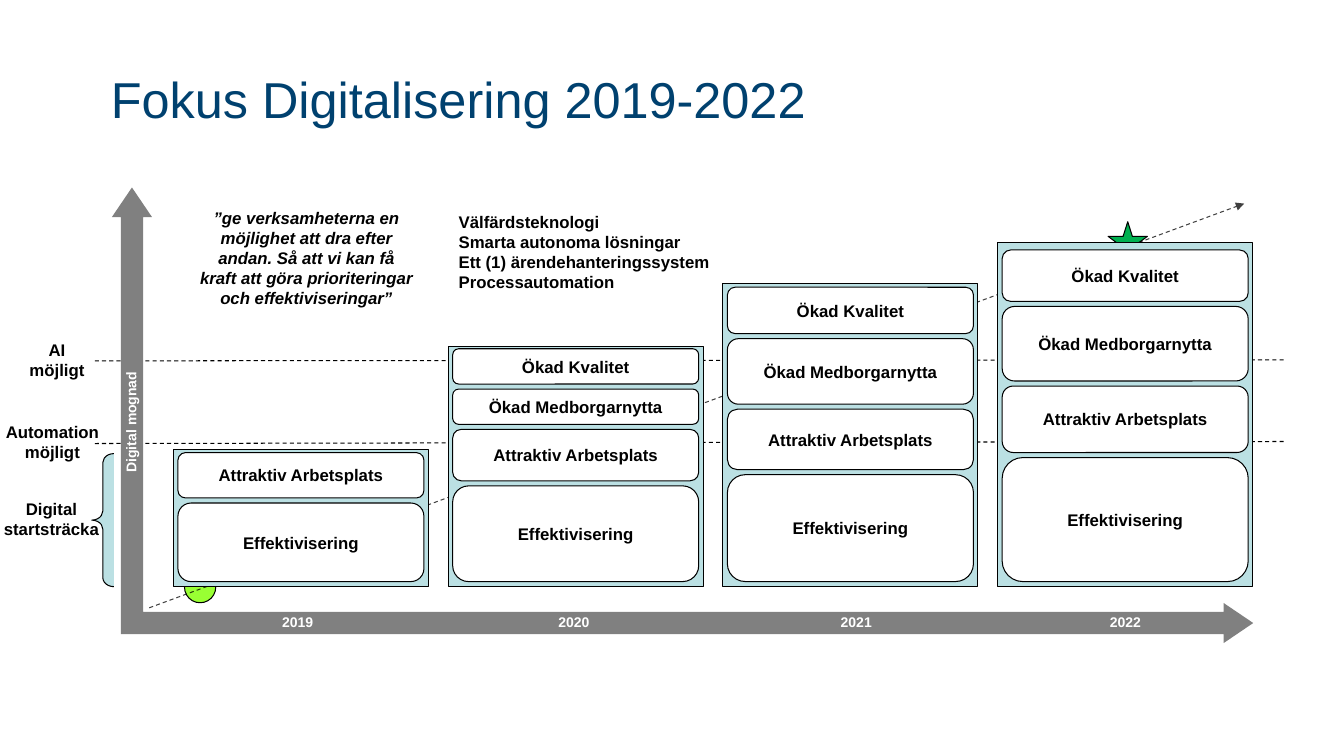
from lxml import etree
from pptx import Presentation
from pptx.dml.color import RGBColor
from pptx.enum.dml import MSO_LINE
from pptx.enum.shapes import MSO_CONNECTOR, MSO_SHAPE
from pptx.enum.text import MSO_ANCHOR, MSO_AUTO_SIZE, PP_ALIGN
from pptx.oxml.ns import qn
from pptx.util import Inches, Pt

LEFT, CENTER = PP_ALIGN.LEFT, PP_ALIGN.CENTER
TOP, MIDDLE = MSO_ANCHOR.TOP, MSO_ANCHOR.MIDDLE
RECT, ROUND = MSO_SHAPE.RECTANGLE, MSO_SHAPE.ROUNDED_RECTANGLE
BLACK, WHITE, GREY, PALE = "000000", "FFFFFF", "808080", "BBE0E3"

TITLE = "Fokus Digitalisering 2019-2022"
GOALS = ["Effektivisering", "Attraktiv Arbetsplats",
         "Ökad Medborgarnytta", "Ökad Kvalitet"]
# year, year label left, column height, goal heights from the bottom up
YEARS = [
    ("2019", 2.70, 1.36, [0.78, 0.45]),
    ("2020", 5.44, 2.38, [0.95, 0.51, 0.35, 0.35]),
    ("2021", 8.24, 3.01, [1.06, 0.60, 0.65, 0.46]),
    ("2022", 10.91, 3.41, [1.23, 0.66, 0.74, 0.51]),
]
LEVELS = [
    ("Digital startsträcka", (-0.1, 4.9, 1.22, 0.5)),
    ("Automation möjligt", (-0.05, 4.13, 1.14, 0.5)),
    ("AI möjligt", (0.14, 3.32, 0.85, 0.5)),
]
QUOTE = ("”ge verksamheterna en möjlighet att dra efter andan. Så att vi kan få "
         "kraft att göra prioriteringar och effektiviseringar”")
INITIATIVES = ["Välfärdsteknologi", "Smarta autonoma lösningar",
               "Ett (1) ärendehanteringssystem", "Processautomation"]

BASELINE, FIRST_COLUMN, COLUMN_PITCH, COLUMN_WIDTH = 5.82, 1.72, 2.725, 2.53
GOAL_WIDTH, GAP = 2.44, 0.05


def rgb(color):
    return RGBColor.from_string(color)


def write(tf, lines, size=12, color=BLACK, bold=True, italic=False,
          align=CENTER, anchor=TOP):
    tf.word_wrap = True
    tf.vertical_anchor = anchor
    for i, line in enumerate(lines):
        p = tf.paragraphs[0] if i == 0 else tf.add_paragraph()
        p.alignment = align
        r = p.add_run()
        r.text = line
        font = r.font
        font.name, font.size = "Arial", Pt(size)
        font.bold, font.italic = bold, italic
        font.color.rgb = rgb(color)


def add_text(s, box, lines, **fmt):
    tb = s.shapes.add_textbox(*map(Inches, box))
    write(tb.text_frame, lines, **fmt)
    return tb


def add_shape(s, kind, box, fill, outline=True, adjust=()):
    sp = s.shapes.add_shape(kind, *map(Inches, box))
    sp.shadow.inherit = False
    sp.fill.solid()
    sp.fill.fore_color.rgb = rgb(fill)
    if outline:
        sp.line.color.rgb = rgb(BLACK)
        sp.line.width = Pt(0.75)
    else:
        sp.line.fill.background()
    for i, value in enumerate(adjust):
        sp.adjustments[i] = value
    return sp


def add_dashed(s, x1, y1, x2, y2):
    line = s.shapes.add_connector(MSO_CONNECTOR.STRAIGHT,
                                  *map(Inches, (x1, y1, x2, y2)))
    line.line.color.rgb = rgb(BLACK)
    line.line.width = Pt(0.75)
    line.line.dash_style = MSO_LINE.DASH
    etree.SubElement(line.element.spPr, qn("a:effectLst"))
    return line


def add_trend(s):
    """Dashed arrow, slightly see-through, from start to goal."""
    ln = add_dashed(s, 1.48, 6.03, 12.34, 2.02).line
    color = next(ln.color._xFill.iter(qn("a:srgbClr")))
    etree.SubElement(color, qn("a:alpha"), val="75000")
    etree.SubElement(ln._get_or_add_ln(), qn("a:tailEnd"), type="triangle")


def add_column(s, left, height, goal_heights):
    add_shape(s, RECT, (left, BASELINE - height, COLUMN_WIDTH, height), PALE)
    goal_left = left + (COLUMN_WIDTH - GOAL_WIDTH) / 2
    top = BASELINE
    for goal, goal_height in zip(GOALS, goal_heights):
        top -= goal_height + GAP
        sp = add_shape(s, ROUND, (goal_left, top, GOAL_WIDTH, goal_height), WHITE)
        write(sp.text_frame, [goal], anchor=MIDDLE)


def main():
    prs = Presentation()
    prs.slide_width, prs.slide_height = Inches(13.33), Inches(7.5)
    s = prs.slides.add_slide(prs.slide_layouts[5])

    title = s.shapes.title
    title.left, title.top = Inches(1), Inches(0.67)
    title.width, title.height = Inches(10.94), Inches(0.61)
    tf = title.text_frame
    tf.auto_size = MSO_AUTO_SIZE.NONE
    tf.margin_left = Inches(0.1)
    tf.margin_top = tf.margin_right = tf.margin_bottom = 0
    write(tf, [TITLE], size=36, color="00416F", bold=False, align=LEFT,
          anchor=MIDDLE)

    add_shape(s, MSO_SHAPE.STAR_5_POINT, (10.99, 2.2, 0.39, 0.38), "00B050")
    add_shape(s, MSO_SHAPE.OVAL, (1.83, 5.67, 0.31, 0.31), "99FF33")
    add_trend(s)
    add_dashed(s, 0.94, 3.58, 12.73, 3.57)
    add_dashed(s, 0.94, 4.4, 12.73, 4.38)

    axes = add_shape(s, MSO_SHAPE.LEFT_UP_ARROW, (1.11, 1.86, 11.32, 4.52), GREY,
                     outline=False, adjust=(0.049, 0.044, 0.065))
    axes.element.spPr.find(qn("a:xfrm")).set("flipH", "1")
    axis_label = add_text(s, (0.21, 3.56, 2.18, 0.27), ["Digital mognad"],
                          size=10, color=WHITE, align=LEFT)
    axis_label.rotation = 270

    for i, (year, label_left, height, goal_heights) in enumerate(YEARS):
        add_column(s, FIRST_COLUMN + i * COLUMN_PITCH, height, goal_heights)
        add_text(s, (label_left, 6.04, 0.55, 0.27), [year],
                 size=10, color=WHITE, align=LEFT)

    add_shape(s, MSO_SHAPE.LEFT_BRACE, (0.91, 4.5, 0.22, 1.32), PALE,
              adjust=(0.405, 0.5))
    for level, box in LEVELS:
        add_text(s, box, [level])
    add_text(s, (1.88, 2.01, 2.32, 1.11), [QUOTE], italic=True)
    add_text(s, (4.45, 2.05, 2.88, 0.91), INITIATIVES, align=LEFT)

    prs.save("out.pptx")


if __name__ == "__main__":
    main()
